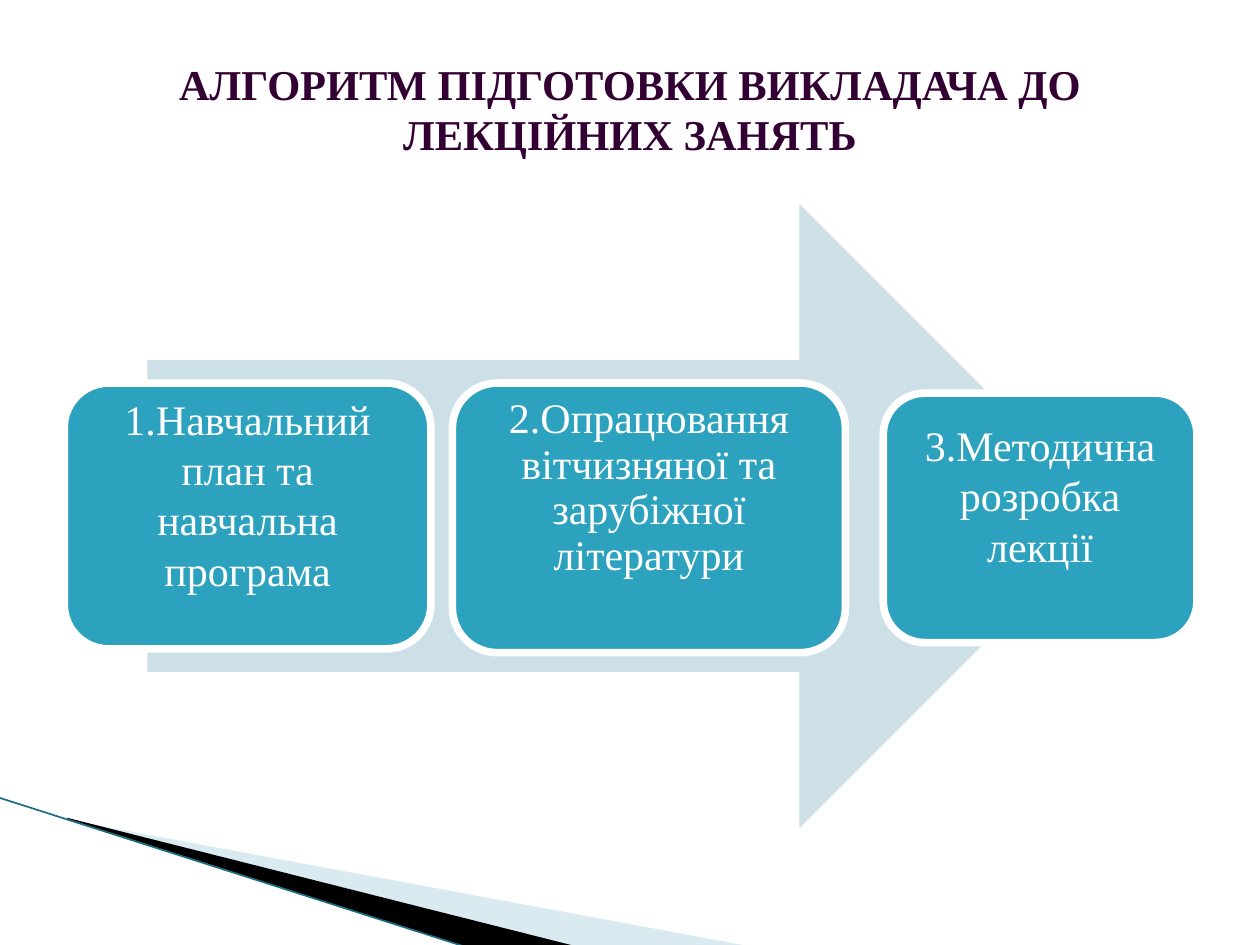
import pptx
import pptx.util
import pptx.dml.color
import pptx.enum.shapes
import pptx.enum.text
import pptx.oxml.ns
import lxml.etree

Inches, Pt = pptx.util.Inches, pptx.util.Pt
RGBColor = pptx.dml.color.RGBColor
SHAPE = pptx.enum.shapes.MSO_SHAPE
qn = pptx.oxml.ns.qn

WHITE = RGBColor(0xFF, 0xFF, 0xFF)
BLACK = RGBColor(0, 0, 0)
PLUM = RGBColor(0x33, 0x00, 0x33)
TEAL = RGBColor(0x2D, 0xA2, 0xBF)
DARK_TEAL = RGBColor(0x1B, 0x6E, 0x82)
PALE_BLUE = RGBColor(0xCD, 0xE0, 0xE8)
MIST = RGBColor(0xA0, 0xCB, 0xDC)
FONT = "Times New Roman"

# Content
TITLE = "АЛГОРИТМ ПІДГОТОВКИ ВИКЛАДАЧА ДО ЛЕКЦІЙНИХ ЗАНЯТЬ"
# text, left, top, width, height, text top, line pitch in points
STEPS = [
    ("1.Навчальний план та навчальна програма", 0.51, 3.04, 2.91, 2.11, 3.12, 28.8),
    ("2.Опрацювання вітчизняної та зарубіжної літератури", 3.59, 3.04, 3.12, 2.14, 3.15, 26),
    ("3.Методична розробка лекції", 7.01, 3.12, 2.49, 1.98, 3.33, 28.8),
]
# corner points, colour, opacity in percent
WEDGES = [
    ([(0.55, 6.51), (5.95, 7.51), (4.56, 7.51), (0.55, 6.5)], MIST, 40),
    ([(0.53, 6.49), (4.57, 7.51), (3.72, 7.52), (0.54, 6.5)], BLACK, 100),
]
PAD = 0.25

prs = pptx.Presentation()
prs.slide_width, prs.slide_height = Inches(10), Inches(7.5)
s = prs.slides.add_slide(prs.slide_layouts[6])


def paint(sp, color):
    sp.shadow.inherit = False
    sp.fill.solid()
    sp.fill.fore_color.rgb = color
    sp.line.fill.background()
    return sp


def add_block(kind, color, *box):
    return paint(s.shapes.add_shape(kind, *map(Inches, box)), color)


def add_text(text, left, top, width, height, size, color, pitch, bold=False):
    tf = s.shapes.add_textbox(*map(Inches, (left, top, width, height))).text_frame
    tf.word_wrap = True
    tf.margin_left = tf.margin_right = tf.margin_top = tf.margin_bottom = 0
    p = tf.paragraphs[0]
    p.text = text
    p.alignment = pptx.enum.text.PP_ALIGN.CENTER
    p.line_spacing = Pt(pitch)
    p.font.name, p.font.size, p.font.bold = FONT, Pt(size), bold
    p.font.color.rgb = color


# Corner decoration
for points, color, opacity in WEDGES:
    corners = [(Inches(x), Inches(y)) for x, y in points]
    builder = s.shapes.build_freeform(*corners[0], scale=1.0)
    builder.add_line_segments(corners[1:], close=True)
    sp = paint(builder.convert_to_shape(), color)
    if opacity < 100:
        clr = sp.fill._xPr.find(qn("a:solidFill"))[0]
        lxml.etree.SubElement(clr, qn("a:alpha"), val=str(opacity * 1000))

edge = s.shapes.add_connector(pptx.enum.shapes.MSO_CONNECTOR.STRAIGHT,
                              *map(Inches, (-0.01, 6.33, 3.71, 7.52)))
edge.line.color.rgb = DARK_TEAL
edge.line.width = Pt(0.95)
lxml.etree.SubElement(edge._element.spPr, qn("a:effectLst"))

# Arrow behind the steps
add_block(SHAPE.RIGHT_ARROW, PALE_BLUE, 1.17, 1.62, 7.65, 4.95)

# Steps
for text, left, top, width, height, text_top, pitch in STEPS:
    card = add_block(SHAPE.ROUNDED_RECTANGLE, TEAL, left, top, width, height)
    card.line.color.rgb = WHITE
    card.line.width = Pt(4.33)
    add_text(text, left + PAD, text_top, width - 2 * PAD,
             top + height - text_top - 0.1, 24, WHITE, pitch)

# Title
add_text(TITLE, 0.6, 0.46, 8.8, 0.9, 24.3, PLUM, 29, bold=True)

prs.save("out.pptx")
